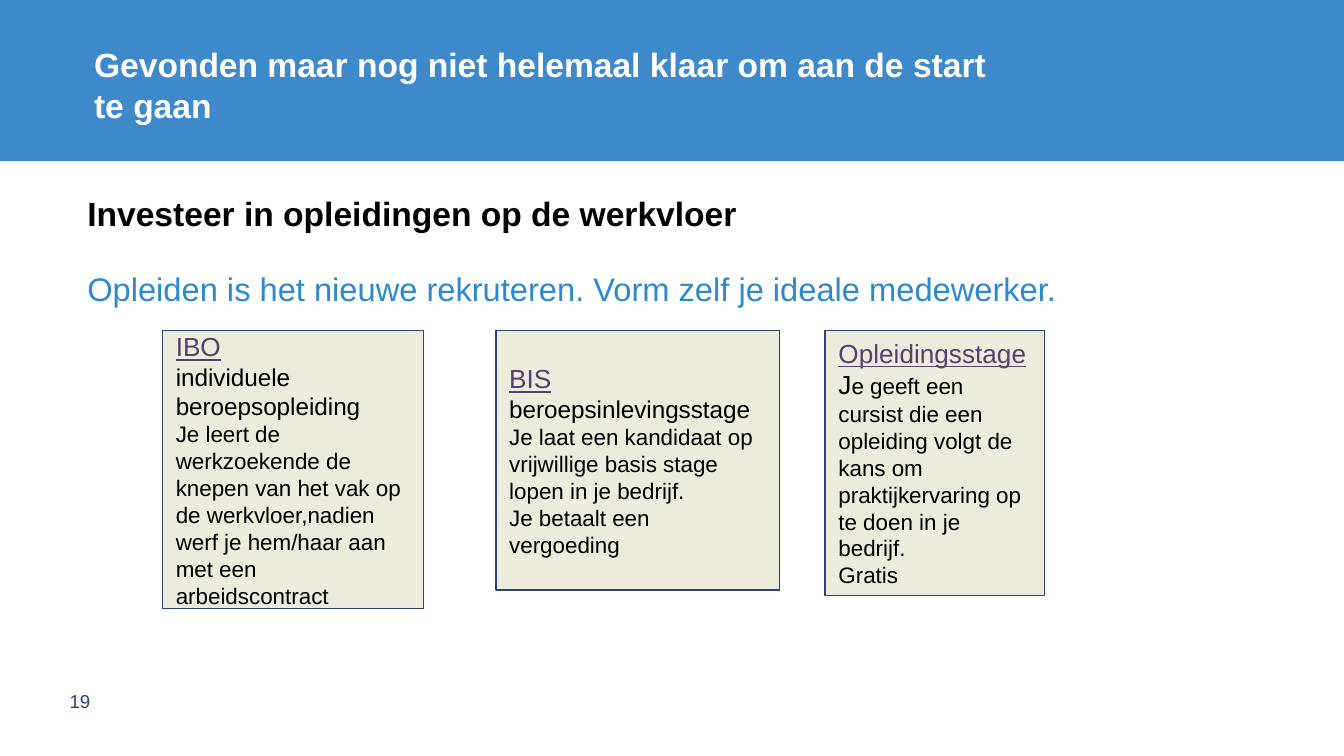
from pptx import Presentation
from pptx import util as u
from pptx.dml.color import RGBColor
from pptx.enum import shapes, text

COLORS = {"banner": "3E89CA", "white": "FFFFFF", "black": "000000", "accent": "2D89CC",
          "navy": "294376", "card": "ECEBDC", "link": "54426A"}
FONT = "Arial"
WIDTH = 10
HEIGHT = WIDTH * 9 / 16
CARD_TOP = 2.46

TITLE = "Gevonden maar nog niet helemaal klaar om aan de start te gaan"
HEADING = "Investeer in opleidingen op de werkvloer"
TAGLINE = "Opleiden is het nieuwe rekruteren. Vorm zelf je ideale medewerker."
PAGE_NUMBER = "19"
CARDS = [
    {"left": 6.14, "width": 1.63, "height": 1.97, "name": "Opleidingsstage", "body": [
        [("J", 14), ("e geeft een cursist die een opleiding volgt de kans om "
                     "praktijkervaring op te doen in je bedrijf.", 12)],
        [("Gratis", 12)]]},
    {"left": 3.69, "width": 2.11, "height": 1.93, "name": "BIS", "body": [
        [("beroepsinlevingsstage", 13)],
        [("Je laat een kandidaat op vrijwillige basis stage lopen in je bedrijf.", 12)],
        [("Je betaalt een vergoeding", 12)]]},
    {"left": 1.21, "width": 1.94, "height": 2.07, "name": "IBO", "body": [
        [("individuele beroepsopleiding", 13)],
        [("Je leert de werkzoekende de knepen van het vak op de werkvloer,nadien "
          "werf je hem/haar aan met een arbeidscontract", 12)]]},
]


def color(name):
    return RGBColor.from_string(COLORS[name])


def style(font, size, shade, bold=False):
    font.name, font.size, font.bold = FONT, u.Pt(size), bold
    font.color.rgb = color(shade)


def frame_text(box, anchor, left_top=0.1):
    frame = box.text_frame
    frame.word_wrap = True
    frame.auto_size = text.MSO_AUTO_SIZE.NONE
    frame.vertical_anchor = anchor
    frame.margin_left = frame.margin_top = u.Inches(left_top)
    frame.margin_right = frame.margin_bottom = u.Inches(0.1)
    return frame


def write(frame, lines):
    for index, (words, size, shade, bold) in enumerate(lines):
        para = frame.add_paragraph() if index else frame.paragraphs[0]
        para.text = words
        para.alignment = text.PP_ALIGN.LEFT
        style(para.font, size, shade, bold)


def add_box(page, left, top, width, height, fill=None):
    area = [u.Inches(value) for value in (left, top, width, height)]
    if fill is None:
        return page.shapes.add_textbox(*area)
    box = page.shapes.add_shape(shapes.MSO_SHAPE.RECTANGLE, *area)
    box.shadow.inherit = False
    box.fill.solid()
    box.fill.fore_color.rgb = color(fill)
    return box


def add_card(page, card):
    box = add_box(page, card["left"], CARD_TOP, card["width"], card["height"], "card")
    box.line.color.rgb = color("navy")
    box.line.width = u.Pt(0.75)
    frame = frame_text(box, text.MSO_ANCHOR.MIDDLE)
    write(frame, [(card["name"], 14, "link", False)])
    frame.paragraphs[0].font.underline = True
    for spans in card["body"]:
        para = frame.add_paragraph()
        para.alignment = text.PP_ALIGN.LEFT
        for words, size in spans:
            span = para.add_run()
            span.text = words
            style(span.font, size, "black")


def main():
    deck = Presentation()
    deck.slide_width, deck.slide_height = u.Inches(WIDTH), u.Inches(HEIGHT)
    page = deck.slides.add_slide(deck.slide_layouts[5])

    banner = add_box(page, 0, 0, WIDTH, 1.2, "banner")
    banner.line.fill.background()

    number = frame_text(add_box(page, 0.17, 5, 0.6, 0.43), text.MSO_ANCHOR.MIDDLE)
    write(number, [(PAGE_NUMBER, 10, "navy", False)])
    number.paragraphs[0].alignment = text.PP_ALIGN.RIGHT

    title = page.shapes.title
    banner.element.addnext(title.element)
    title.left, title.top = u.Inches(0.7), u.Inches(0.33)
    title.width, title.height = u.Inches(6.89), u.Inches(0.88)
    write(frame_text(title, text.MSO_ANCHOR.TOP, 0), [(TITLE, 18, "white", True)])

    intro = frame_text(add_box(page, 0.65, 1.39, 8.47, 3.64), text.MSO_ANCHOR.TOP, 0)
    write(intro, [(HEADING, 18, "black", True), (TAGLINE, 17.5, "accent", False)])
    for para in intro.paragraphs:
        para.line_spacing = 1.15
    intro.paragraphs[1].space_before = u.Pt(16)

    for card in CARDS:
        add_card(page, card)

    deck.save("out.pptx")


if __name__ == "__main__":
    main()
